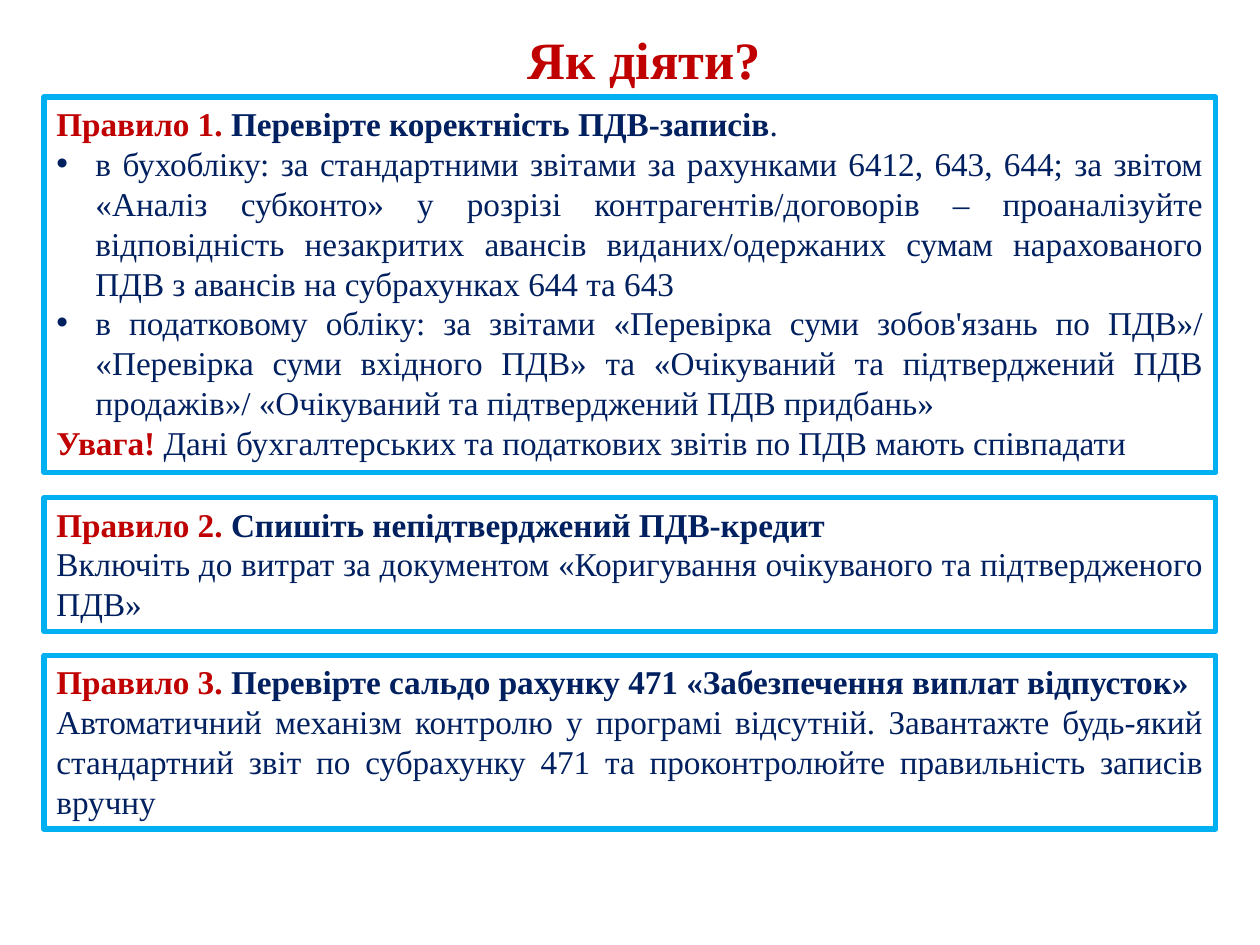
from dataclasses import dataclass

import pptx
import pptx.dml.color
import pptx.enum.shapes
import pptx.enum.text
import pptx.oxml
import pptx.oxml.ns
import pptx.util
from pptx.util import Inches, Pt

FONT = "Times New Roman"
RED, NAVY, BLUE = "C00000", "002060", "00B0F0"
LEFT, WIDTH = 0.35, 9.3
INDENT = 0.31


@dataclass
class Span:
    text: str
    color: str = NAVY
    bold: bool = False


@dataclass
class Para:
    spans: list[Span]
    bullet: bool = False


@dataclass
class Rule:
    top: float
    height: float
    paras: list[Para]


def heading(label: str, text: str, tail: str = "") -> Para:
    spans = [Span(label + " ", RED, True), Span(text, bold=True)]
    if tail:
        spans.append(Span(tail))
    return Para(spans)


RULES = [
    Rule(0.77, 2.98, [
        heading("Правило 1.", "Перевірте коректність ПДВ-записів", "."),
        Para([Span("в бухобліку: за стандартними звітами за рахунками 6412, 643, 644; "
                   "за звітом «Аналіз субконто» у розрізі контрагентів/договорів – "
                   "проаналізуйте відповідність незакритих авансів виданих/одержаних "
                   "сумам нарахованого ПДВ з авансів на субрахунках 644 та 643")], True),
        Para([Span("в податковому обліку: за звітами «Перевірка суми зобов'язань по ПДВ»/ "
                   "«Перевірка суми вхідного ПДВ» та «Очікуваний та підтверджений ПДВ "
                   "продажів»/ «Очікуваний та підтверджений ПДВ придбань»")], True),
        Para([Span("Увага! ", RED, True),
              Span("Дані бухгалтерських та податкових звітів по ПДВ мають співпадати")]),
    ]),
    Rule(3.95, 1.06, [
        heading("Правило 2.", "Спишіть непідтверджений ПДВ-кредит"),
        Para([Span("Включіть до витрат за документом «Коригування очікуваного "
                   "та підтвердженого ПДВ»")]),
    ]),
    Rule(5.2, 1.38, [
        heading("Правило 3.", "Перевірте сальдо рахунку 471 «Забезпечення виплат відпусток»"),
        Para([Span("Автоматичний механізм контролю у програмі відсутній. Завантажте "
                   "будь-який стандартний звіт по субрахунку 471 та проконтролюйте "
                   "правильність записів вручну")]),
    ]),
]


def rgb(color: str) -> pptx.dml.color.RGBColor:
    return pptx.dml.color.RGBColor.from_string(color)


def add_span(p, span: Span, size: float) -> None:
    r = p.add_run()
    r.text = span.text
    for name, value in {"name": FONT, "size": Pt(size), "bold": span.bold}.items():
        setattr(r.font, name, value)
    r.font.color.rgb = rgb(span.color)


def set_bullet(p) -> None:
    pPr = p._p.get_or_add_pPr()
    pPr.set("marL", str(Inches(INDENT)))
    pPr.set("indent", str(-Inches(INDENT)))
    ns = pptx.oxml.ns.nsdecls("a")
    pPr.append(pptx.oxml.parse_xml(f'<a:buFont {ns} typeface="Arial"/>'))
    pPr.append(pptx.oxml.parse_xml(f'<a:buChar {ns} char="•"/>'))


def add_title(s, text: str) -> None:
    sp = s.shapes.title
    box = {"left": 4.08, "top": 0.16, "width": 2.07, "height": 0.61}
    for name, value in box.items():
        setattr(sp, name, Inches(value))
    tf = sp.text_frame
    tf.word_wrap = False
    tf.auto_size = pptx.enum.text.MSO_AUTO_SIZE.NONE
    add_span(tf.paragraphs[0], Span(text, RED, True), 30)


def add_rule(s, rule: Rule) -> None:
    sp = s.shapes.add_shape(
        pptx.enum.shapes.MSO_SHAPE.RECTANGLE,
        Inches(LEFT), Inches(rule.top), Inches(WIDTH), Inches(rule.height))
    sp.shadow.inherit = False
    sp.fill.background()
    sp.line.color.rgb = rgb(BLUE)
    sp.line.width = Pt(3)
    tf = sp.text_frame
    tf.word_wrap = True
    tf.vertical_anchor = pptx.enum.text.MSO_ANCHOR.TOP
    for i, para in enumerate(rule.paras):
        p = tf.add_paragraph() if i else tf.paragraphs[0]
        p.alignment = pptx.enum.text.PP_ALIGN.JUSTIFY
        if para.bullet:
            set_bullet(p)
        for span in para.spans:
            add_span(p, span, 19)


def main() -> None:
    prs = pptx.Presentation()
    prs.slide_width, prs.slide_height = Inches(10), Inches(7.5)
    s = prs.slides.add_slide(prs.slide_layouts.get_by_name("Title Only"))
    add_title(s, "Як діяти?")
    for rule in RULES:
        add_rule(s, rule)
    prs.save("out.pptx")


if __name__ == "__main__":
    main()
